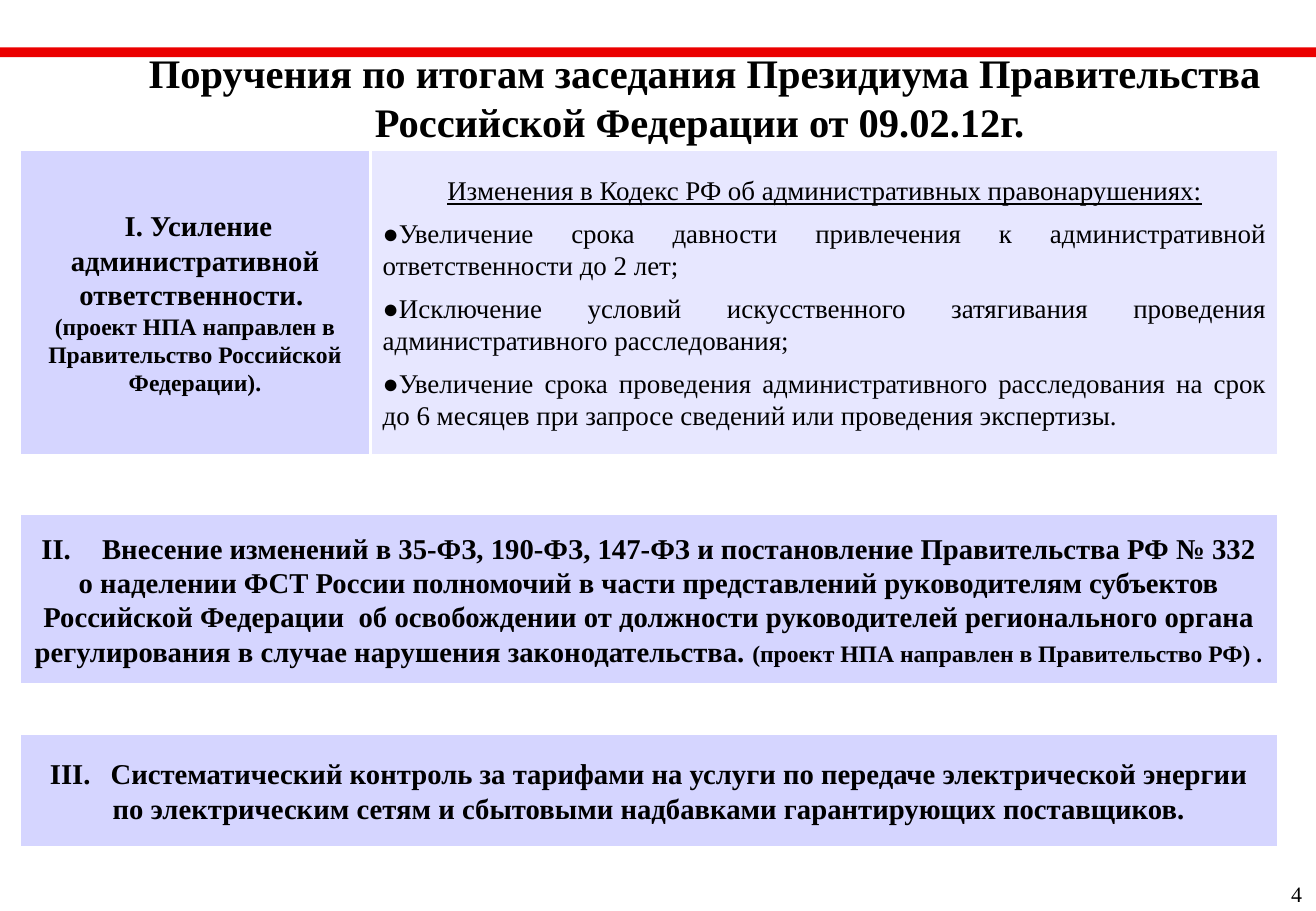
from lxml import etree
from pptx import Presentation
from pptx.dml.color import RGBColor
from pptx.enum.shapes import MSO_SHAPE
from pptx.enum.text import MSO_ANCHOR, MSO_AUTO_SIZE, PP_ALIGN
from pptx.oxml.ns import qn
from pptx.util import Pt

RECT = MSO_SHAPE.RECTANGLE
MIDDLE, TOP = MSO_ANCHOR.MIDDLE, MSO_ANCHOR.TOP
NO_FIT = MSO_AUTO_SIZE.NONE
CENTER, JUSTIFY = PP_ALIGN.CENTER, PP_ALIGN.JUSTIFY

COLORS = {"bar": "EB0000", "heading": "D5D5FF", "detail": "E7E7FF",
          "border": "FFFFFF", "text": "000000"}
FONT = "Times New Roman"
SLIDE_W, SLIDE_H = 780.48, 540
LEFT, WIDTH = 11.52, 746.64
HEADING_W = 208.4
TAB_POS = 36
BULLET_GAP = 6

# A paragraph is a list of runs: (text, size, style), style made of "b" and "u"
TITLE = [[("Поручения по итогам заседания Президиума Правительства "
           "Российской Федерации от 09.02.12г. ", 24, "b")]]
PAGE_NUMBER = [[("4", 13, "")]]
LIABILITY = [
    [(" ", 16, "b"), ("I. Усиление административной ответственности. ", 17, "b")],
    [("(проект НПА направлен в Правительство Российской Федерации).", 14, "b")],
]
CODE_HEADING = "Изменения в Кодекс РФ об административных правонарушениях:"
CODE_CHANGES = [
    "Увеличение срока давности привлечения к административной ответственности до 2 лет;",
    "Исключение условий искусственного затягивания проведения административного "
    "расследования;",
    "Увеличение срока проведения административного расследования на срок до 6 месяцев "
    "при запросе сведений или проведения экспертизы.",
]
AMENDMENTS = [[
    ("II.\tВнесение изменений в 35-ФЗ, 190-ФЗ, 147-ФЗ и постановление Правительства РФ "
     "№ 332 о наделении ФСТ России полномочий в части представлений руководителям "
     "субъектов Российской Федерации  об освобождении от должности руководителей "
     "регионального органа регулирования в случае нарушения законодательства. ", 17, "b"),
    ("(проект НПА направлен в Правительство РФ) .", 14, "b"),
]]
TARIFFS = [[
    ("III.\tСистематический контроль за тарифами на услуги по передаче электрической "
     "энергии по электрическим сетям и сбытовыми надбавками гарантирующих поставщиков.",
     17, "b"),
]]
CODE_TEXT = [[(CODE_HEADING, 16, "u")]] + [
    [("●", 16, "b"), (change, 16, "")] for change in CODE_CHANGES]

# left, top, width, height, fill, paragraphs
BLOCKS = [
    (LEFT, 88.56, HEADING_W, 181.44, "heading", LIABILITY),
    (LEFT + HEADING_W, 88.56, WIDTH - HEADING_W, 181.44, "detail", CODE_TEXT),
    (LEFT, 304.2, WIDTH, 102, "heading", AMENDMENTS),
    (LEFT, 434.5, WIDTH, 68, "heading", TARIFFS),
]


def rgb(name):
    return RGBColor.from_string(COLORS[name])


def add_tab_stop(p):
    tabs = etree.SubElement(p._p.get_or_add_pPr(), qn("a:tabLst"))
    etree.SubElement(tabs, qn("a:tab"), pos=str(Pt(TAB_POS)), algn="l")


def write(sp, paragraphs, anchor=MIDDLE, wrap=True):
    tf = sp.text_frame
    tf.auto_size = NO_FIT
    tf.word_wrap = wrap
    tf.vertical_anchor = anchor
    for i, runs in enumerate(paragraphs):
        p = tf.add_paragraph() if i else tf.paragraphs[0]
        bulleted = runs[0][0] == "●"
        p.alignment = JUSTIFY if bulleted else CENTER
        if bulleted:
            p.space_before = Pt(BULLET_GAP)
        if "\t" in runs[0][0]:
            add_tab_stop(p)
        for text, size, style in runs:
            r = p.add_run()
            r.text = text
            r.font.name = FONT
            r.font.size = Pt(size)
            r.font.bold = "b" in style
            r.font.underline = "u" in style
            r.font.color.rgb = rgb("text")


def add_rect(slide, left, top, width, height, fill):
    sp = slide.shapes.add_shape(RECT, Pt(left), Pt(top), Pt(width), Pt(height))
    sp.shadow.inherit = False
    sp.fill.solid()
    sp.fill.fore_color.rgb = rgb(fill)
    return sp


def main():
    prs = Presentation()
    prs.slide_width, prs.slide_height = Pt(SLIDE_W), Pt(SLIDE_H)
    slide = prs.slides.add_slide(prs.slide_layouts[5])

    title = slide.shapes.title
    title.left, title.top = Pt(55.44), Pt(25.92)
    title.width, title.height = Pt(725.04), Pt(62.64)
    write(title, TITLE)

    bar = add_rect(slide, 0, 28.08, SLIDE_W, 5.76, "bar")
    bar.line.fill.background()

    for left, top, width, height, fill, paragraphs in BLOCKS:
        block = add_rect(slide, left, top, width, height, fill)
        block.line.color.rgb = rgb("border")
        block.line.width = Pt(2)
        write(block, paragraphs)

    number = slide.shapes.add_textbox(Pt(758.16), Pt(518.4), Pt(21.6), Pt(23.04))
    write(number, PAGE_NUMBER, anchor=TOP, wrap=False)

    prs.save("out.pptx")


if __name__ == "__main__":
    main()
